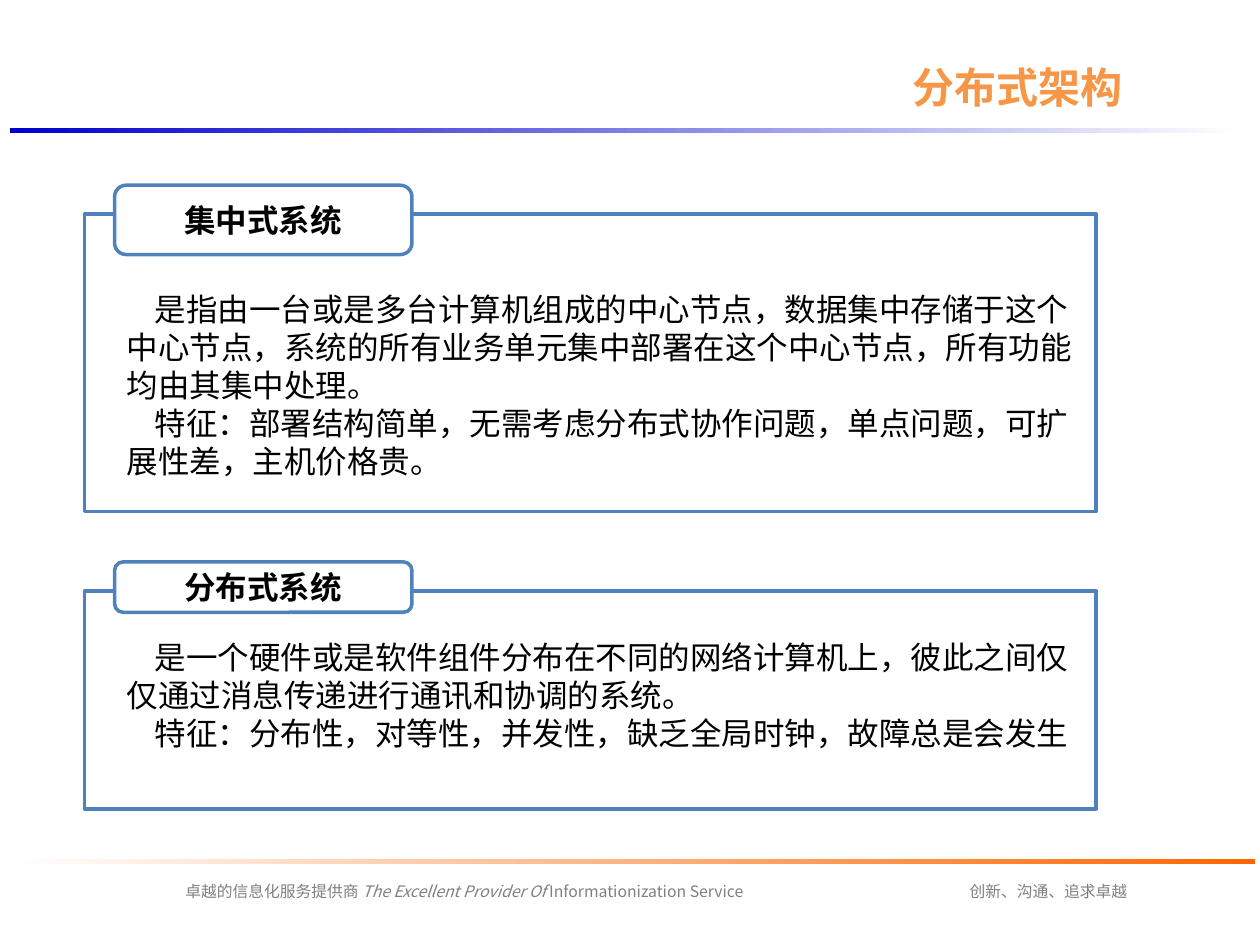
from pptx import Presentation
from pptx.dml.color import RGBColor
from pptx.enum.shapes import MSO_SHAPE
from pptx.enum.text import MSO_ANCHOR, PP_ALIGN
from pptx.oxml.ns import qn
from pptx.util import Inches, Pt
from lxml.etree import SubElement

FONT = "Noto Sans CJK SC"
BLUE, WHITE, BLACK, GRAY = "4F81BD", "FFFFFF", "000000", "808080"


def color(value):
    """Turn a hex string into a colour."""
    return RGBColor.from_string(value)


def add_span(para, text, size, fill, bold=False, italic=False):
    """Append one formatted run to a paragraph."""
    span = para.add_run()
    span.text = text
    font = span.font
    font.name, font.size, font.bold, font.italic = FONT, Pt(size), bold, italic
    font.color.rgb = color(fill)
    SubElement(span._r.get_or_add_rPr(), qn("a:ea")).set("typeface", FONT)


def add_bar(page, left, top, width, start, end):
    """Draw a thin rule that fades from one colour to another."""
    bar = page.shapes.add_shape(MSO_SHAPE.RECTANGLE, Inches(left), Inches(top),
                                Inches(width), Inches(0.04))
    bar.shadow.inherit = False
    bar.line.fill.background()
    bar.fill.gradient()
    bar.fill.gradient_angle = 0
    for stop, value in zip(bar.fill.gradient_stops, (start, end)):
        stop.color.rgb = color(value)


def add_outline(page, kind, left, top, width, height):
    """Draw a white shape with a blue outline."""
    shape = page.shapes.add_shape(kind, Inches(left), Inches(top),
                                  Inches(width), Inches(height))
    shape.shadow.inherit = False
    shape.fill.solid()
    shape.fill.fore_color.rgb = color(WHITE)
    shape.line.color.rgb = color(BLUE)
    shape.line.width = Pt(2)
    return shape


def add_text_box(page, left, top, width, height):
    """Add a wrapping text box and return its text frame."""
    box = page.shapes.add_textbox(Inches(left), Inches(top), Inches(width), Inches(height))
    box.text_frame.word_wrap = True
    return box.text_frame


def add_title(page, left, top, width, height):
    """Place and format the title placeholder."""
    title = page.shapes.title
    title.left, title.top = Inches(left), Inches(top)
    title.width, title.height = Inches(width), Inches(height)
    title.text_frame.vertical_anchor = MSO_ANCHOR.MIDDLE
    para = title.text_frame.paragraphs[0]
    para.alignment = PP_ALIGN.CENTER
    add_span(para, "分布式架构", 24, "F79646", bold=True)


def add_panel(page, left, top, width, height, label, label_height, text_offset, texts):
    """Draw a framed panel with a label on its top edge and indented text."""
    inner = left + 0.24
    add_outline(page, MSO_SHAPE.FLOWCHART_PROCESS, left, top, width, height)
    tag = add_outline(page, MSO_SHAPE.ROUNDED_RECTANGLE, inner, top - 0.23, 2.36, label_height)
    tag.text_frame.word_wrap = False
    tag.text_frame.vertical_anchor = MSO_ANCHOR.MIDDLE
    para = tag.text_frame.paragraphs[0]
    para.alignment = PP_ALIGN.CENTER
    add_span(para, label, 18, BLACK, bold=True)

    frame = add_text_box(page, inner, top + text_offset, 7.87, height - text_offset - 0.1)
    for index, text in enumerate(texts):
        para = frame.add_paragraph() if index else frame.paragraphs[0]
        para.line_spacing = Pt(21.7)
        para._p.get_or_add_pPr().set("indent", str(Inches(0.22)))
        add_span(para, text, 18, BLACK)


def add_footer(page, left, top, width, spans):
    """Add one centred footer line from (text, italic) pairs."""
    para = add_text_box(page, left, top, width, 0.25).paragraphs[0]
    para.alignment = PP_ALIGN.CENTER
    for text, italic in spans:
        add_span(para, text, 9, GRAY, italic=italic)


def main():
    """Build and save the deck."""
    deck = Presentation()
    deck.slide_width, deck.slide_height = Inches(10), Inches(7.5)
    page = deck.slides.add_slide(deck.slide_layouts[5])
    add_bar(page, 0.08, 6.82, 9.88, WHITE, "FF6600")
    add_bar(page, 0.08, 1.02, 9.8, "0000CC", WHITE)
    add_footer(page, 7.11, 6.95, 2.42, [("创新、沟通、追求卓越", False)])
    add_footer(page, 0.5, 6.95, 6.37, [
        ("卓越的信息化服务提供商 ", False),
        ("The Excellent Provider Of ", True),
        ("Informationization Service", False),
    ])
    add_title(page, 6.73, 0.29, 2.69, 0.79)
    add_panel(page, 0.67, 1.7, 8.03, 2.36, "集中式系统", 0.55, 0.55, [
        "是指由一台或是多台计算机组成的中心节点，数据集中存储于这个中心节点，"
        "系统的所有业务单元集中部署在这个中心节点，所有功能均由其集中处理。",
        "特征：部署结构简单，无需考虑分布式协作问题，单点问题，可扩展性差，主机价格贵。",
    ])
    add_panel(page, 0.67, 4.69, 8.03, 1.73, "分布式系统", 0.4, 0.32, [
        "是一个硬件或是软件组件分布在不同的网络计算机上，"
        "彼此之间仅仅通过消息传递进行通讯和协调的系统。",
        "特征：分布性，对等性，并发性，缺乏全局时钟，故障总是会发生",
    ])
    deck.save("out.pptx")


if __name__ == "__main__":
    main()
